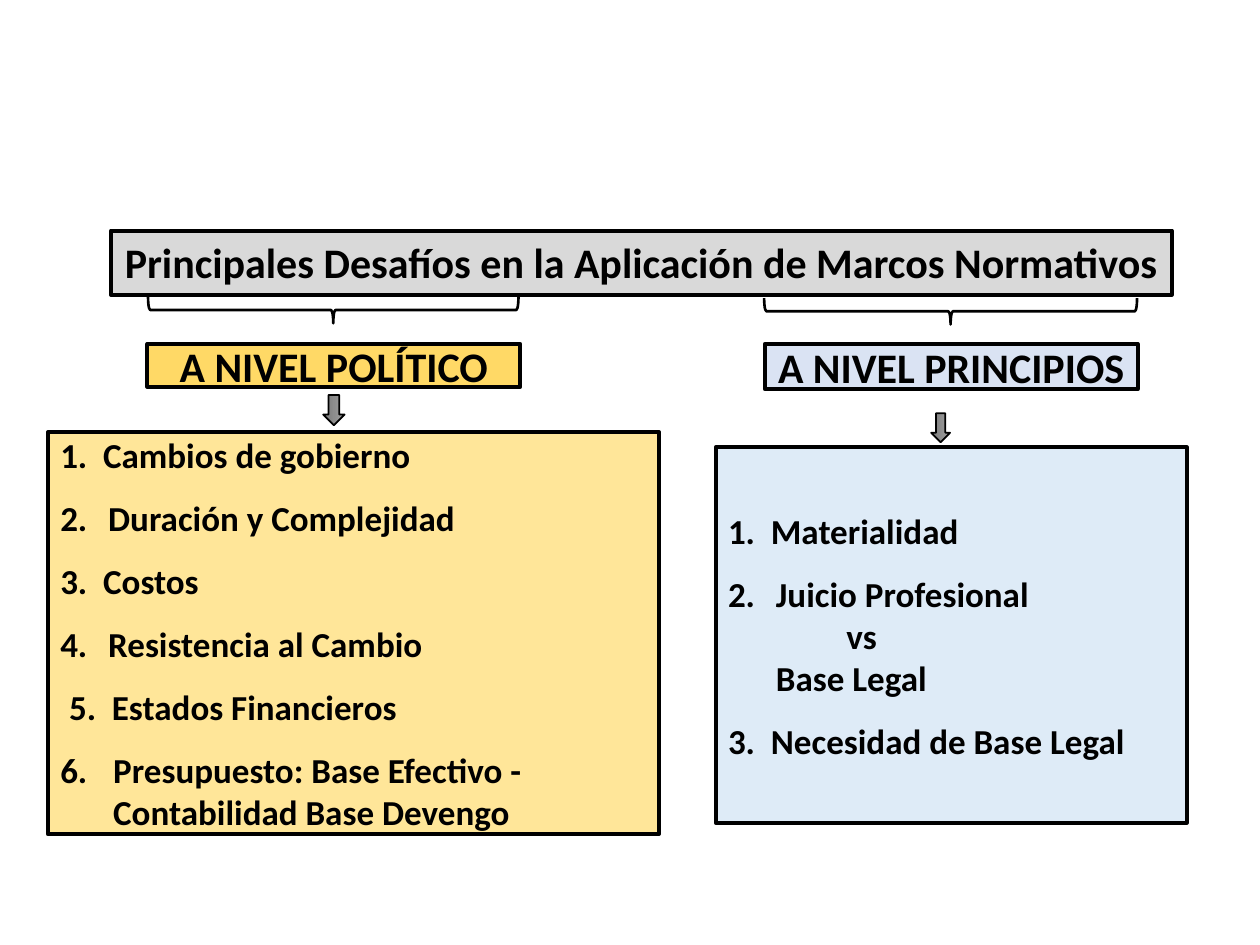
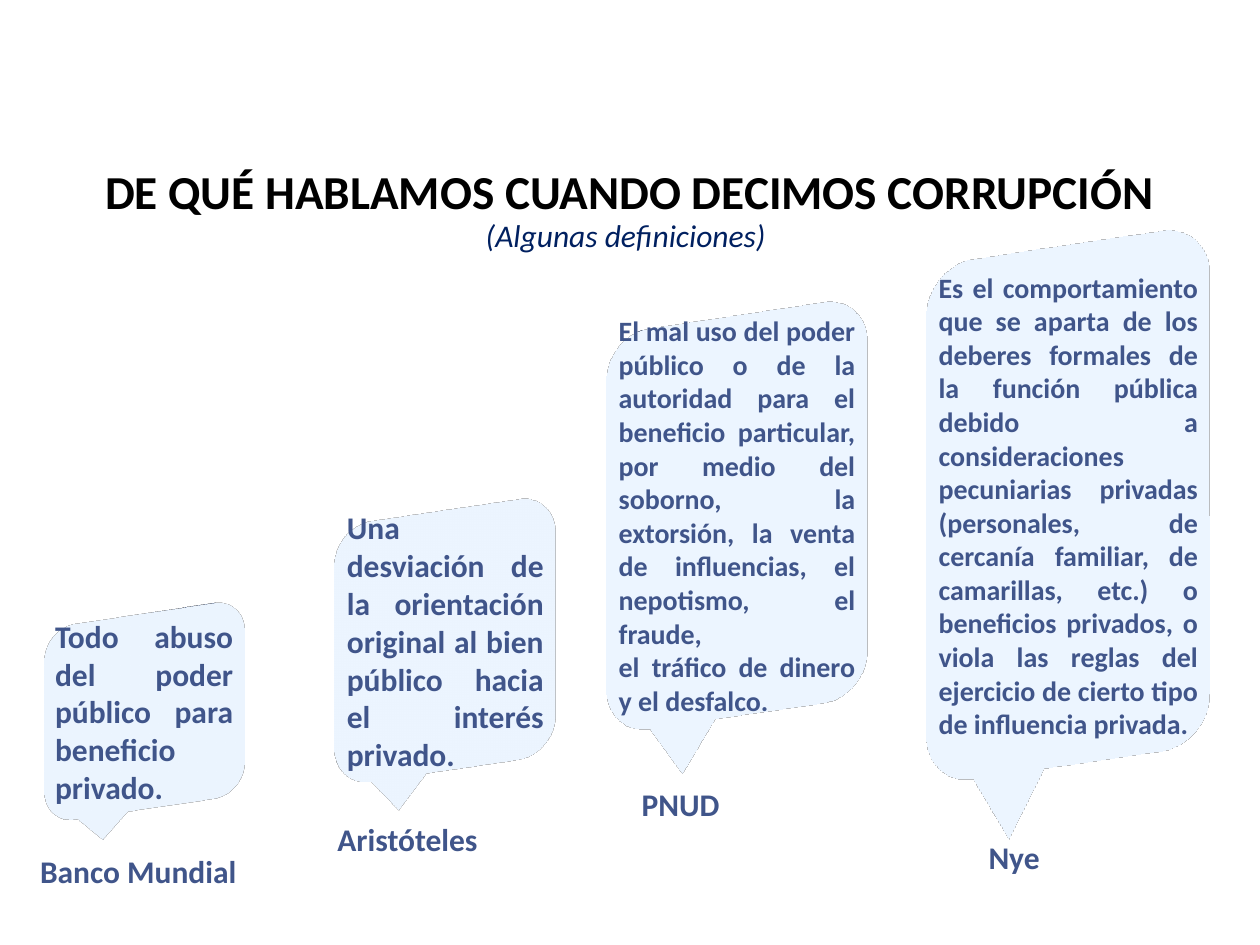
from dataclasses import dataclass

from lxml import etree
from pptx import Presentation
from pptx.dml.color import RGBColor
from pptx.enum.shapes import MSO_SHAPE
from pptx.enum.text import MSO_ANCHOR, PP_ALIGN
from pptx.oxml.ns import qn
from pptx.util import Inches, Pt


@dataclass(frozen=True)
class Theme:
    font: str = "Calibri"
    black: str = "000000"
    navy: str = "002060"
    slate: str = "40558A"
    gray_blue: str = "44546A"
    banner: str = "D9D9D9"
    gold: str = "FFD966"
    pale_gold: str = "FFE699"
    blue: str = "DAE3F3"
    pale_blue: str = "DEEBF7"
    arrow_light: str = "9D9D9D"
    arrow_dark: str = "7C7C7C"
    title: float = 27
    heading: float = 24
    item: float = 20
    body: float = 18
    dense: float = 16


@dataclass(frozen=True)
class Item:
    text: str
    margin: float
    hanging: float = 0
    number: int = 0
    automatic: bool = False
    after: float = 12


@dataclass(frozen=True)
class Definition:
    author: str
    label_place: tuple
    label_align: PP_ALIGN
    bubble_place: tuple
    outline: str
    size: float
    texts: list


def color(value):
    return RGBColor.from_string(value)


class SlideBuilder:
    def __init__(self, deck, theme):
        self.deck = deck
        self.theme = theme
        self.page = None

    def new_page(self):
        self.page = self.deck.slides.add_slide(self.deck.slide_layouts[6])

    def add_span(self, para, text, size, ink, bold=True, italic=False):
        span = para.add_run()
        span.text = text
        font = span.font
        font.name, font.size = self.theme.font, Pt(size)
        font.bold, font.italic = bold, italic
        font.color.rgb = color(ink)

    def prepare_frame(self, box, anchor, side=0.1):
        frame = box.text_frame
        frame.word_wrap = True
        frame.vertical_anchor = anchor
        frame.margin_left = frame.margin_right = Inches(side)
        frame.margin_top = frame.margin_bottom = Inches(0.05)
        return frame

    def write_paragraphs(self, frame, texts, align, size, ink):
        for index, text in enumerate(texts):
            para = frame.paragraphs[0] if index == 0 else frame.add_paragraph()
            para.alignment = align
            self.add_span(para, text, size, ink)

    def shape(self, kind, place, fill=None, line_width=2.25, rotation=0, outline=None):
        shape = self.page.shapes.add_shape(kind, *map(Inches, place))
        shape.shadow.inherit = False
        shape.rotation = rotation
        if fill:
            shape.fill.solid()
            shape.fill.fore_color.rgb = color(fill)
        else:
            shape.fill.background()
        shape.line.color.rgb = color(outline or self.theme.black)
        shape.line.width = Pt(line_width)
        return shape

    def heading(self, text, place, fill, anchor=MSO_ANCHOR.MIDDLE):
        box = self.shape(MSO_SHAPE.RECTANGLE, place, fill)
        frame = self.prepare_frame(box, anchor, side=0.05)
        self.write_paragraphs(frame, [text], PP_ALIGN.CENTER,
                              self.theme.heading, self.theme.black)

    def item_list(self, items, place, fill):
        box = self.shape(MSO_SHAPE.RECTANGLE, place, fill)
        frame = self.prepare_frame(box, MSO_ANCHOR.MIDDLE)
        for index, item in enumerate(items):
            para = frame.paragraphs[0] if index == 0 else frame.add_paragraph()
            properties = para._p.get_or_add_pPr()
            properties.set("marL", str(Inches(item.margin)))
            properties.set("indent", str(-Inches(item.hanging)))
            text = item.text
            if item.automatic:
                bullet = etree.SubElement(properties, qn("a:buAutoNum"))
                bullet.set("type", "arabicPeriod")
                bullet.set("startAt", str(item.number))
            elif item.number:
                text = f"{item.number}.\t{text}"
            para.alignment = PP_ALIGN.LEFT
            para.space_after = Pt(item.after)
            self.add_span(para, text, self.theme.item, self.theme.black)

    def arrow(self, place):
        arrow = self.shape(MSO_SHAPE.RIGHT_ARROW, place, line_width=1, rotation=90)
        arrow.fill.gradient()
        arrow.fill.gradient_angle = 270
        shades = (self.theme.arrow_light, self.theme.arrow_dark)
        for stop, shade, position in zip(arrow.fill.gradient_stops, shades, (0, 1)):
            stop.color.rgb = color(shade)
            stop.position = position

    def brace(self, place):
        self.shape(MSO_SHAPE.LEFT_BRACE, place, line_width=1.5, rotation=270)

    def title(self, text, subtitle, place):
        box = self.page.shapes.add_textbox(*map(Inches, place))
        frame = self.prepare_frame(box, MSO_ANCHOR.TOP)
        para = frame.paragraphs[0]
        para.alignment, para.line_spacing = PP_ALIGN.CENTER, 0.9
        self.add_span(para, text, self.theme.title, self.theme.black)
        para.add_line_break()
        self.add_span(para, subtitle, self.theme.body, self.theme.navy, False, True)

    def label(self, text, place, align):
        box = self.page.shapes.add_textbox(*map(Inches, place))
        frame = self.prepare_frame(box, MSO_ANCHOR.TOP)
        frame.word_wrap = False
        self.write_paragraphs(frame, [text], align, self.theme.body, self.theme.slate)

    def bubble(self, texts, place, outline, size):
        bubble = self.shape(MSO_SHAPE.ROUNDED_RECTANGULAR_CALLOUT, place,
                            self.theme.blue, 1, outline=outline)
        # Turn the bubble in space, seen from the right
        properties = bubble._element.spPr
        scene = etree.SubElement(properties, qn("a:scene3d"))
        etree.SubElement(scene, qn("a:camera")).set("prst", "isometricOffAxis1Right")
        light = etree.SubElement(scene, qn("a:lightRig"))
        light.set("rig", "threePt")
        light.set("dir", "t")
        etree.SubElement(properties, qn("a:sp3d"))

        frame = self.prepare_frame(bubble, MSO_ANCHOR.MIDDLE)
        self.write_paragraphs(frame, texts, PP_ALIGN.JUSTIFY, size, self.theme.slate)


def build_challenges(builder):
    theme = builder.theme
    builder.new_page()
    builder.heading("Principales Desafíos en la Aplicación de Marcos Normativos",
                    (0.88, 1.83, 8.42, 0.51), theme.banner, MSO_ANCHOR.TOP)

    # Political level
    builder.item_list([
        Item("Cambios de gobierno", 0.34, 0.34, 1),
        Item("Duración y Complejidad", 0.38, 0.38, 2, automatic=True),
        Item("Costos", 0.34, 0.34, 3),
        Item("Resistencia al Cambio", 0.38, 0.38, 4, automatic=True),
        Item("Estados Financieros", 0.41, 0.34, 5),
        Item("Presupuesto: Base Efectivo - Contabilidad Base Devengo",
             0.42, 0.42, 6, automatic=True),
    ], (0.38, 3.43, 4.85, 3.19), theme.pale_gold)
    builder.heading("A NIVEL POLÍTICO", (1.17, 2.73, 2.96, 0.34), theme.gold)
    builder.arrow((2.53, 3.17, 0.24, 0.17))

    # Level of principles
    builder.item_list([
        Item("Materialidad", 0.34, 0.34, 1),
        Item("Juicio Profesional", 0.38, 0.38, 2, automatic=True, after=0),
        Item("vs", 0.94, after=0),
        Item("Base Legal", 0.38),
        Item("Necesidad de Base Legal", 0.34, 0.34, 3),
    ], (5.68, 3.55, 3.74, 2.98), theme.pale_blue)
    builder.heading("A NIVEL PRINCIPIOS", (6.07, 2.73, 2.96, 0.36), theme.blue)
    builder.arrow((7.35, 3.32, 0.23, 0.15))

    # Braces under the banner
    builder.brace((2.54, 0.99, 0.21, 2.94))
    builder.brace((7.44, 0.99, 0.21, 2.96))


def build_definitions(builder):
    theme = builder.theme
    builder.new_page()
    builder.title("DE QUÉ HABLAMOS CUANDO DECIMOS CORRUPCIÓN",
                  "(Algunas definiciones) ", (0.33, 1.29, 9.33, 0.83))

    definitions = [
        Definition(
            "Aristóteles", (2.49, 6.46, 1.4, 0.4), PP_ALIGN.RIGHT,
            (2.56, 4, 1.95, 2.17), theme.gray_blue, theme.body,
            ["Una desviación de la orientación original al bien público hacia "
             "el interés privado."]),
        Definition(
            "Banco Mundial", (0.22, 6.71, 1.77, 0.4), PP_ALIGN.JUSTIFY,
            (0.26, 4.83, 1.77, 1.63), theme.navy, theme.body,
            ["Todo abuso del poder público para beneficio privado. "]),
        Definition(
            "Nye", (7.74, 6.6, 0.61, 0.4), PP_ALIGN.RIGHT,
            (7.23, 1.84, 2.5, 4.34), theme.navy, theme.dense,
            ["Es el comportamiento que se aparta de los deberes formales de la función "
             "pública debido a consideraciones pecuniarias privadas (personales, de "
             "cercanía familiar, de camarillas, etc.) o beneficios privados, o viola "
             "las reglas del ejercicio de cierto tipo de influencia privada. "]),
        Definition(
            "PNUD", (4.98, 6.18, 0.83, 0.4), PP_ALIGN.RIGHT,
            (4.7, 2.42, 2.3, 3.34), theme.navy, theme.dense,
            ["El mal uso del poder público o de la autoridad para el beneficio "
             "particular, ",
             "por medio del soborno, la extorsión, la venta de influencias, "
             "el nepotismo, el fraude,",
             "el tráfico de dinero y el desfalco. "]),
    ]
    for entry in definitions:
        builder.bubble(entry.texts, entry.bubble_place, entry.outline, entry.size)
        builder.label(entry.author, entry.label_place, entry.label_align)


def main():
    deck = Presentation()
    deck.slide_width, deck.slide_height = Inches(10), Inches(7.5)
    builder = SlideBuilder(deck, Theme())
    build_challenges(builder)
    build_definitions(builder)
    deck.save("out.pptx")


if __name__ == "__main__":
    main()
